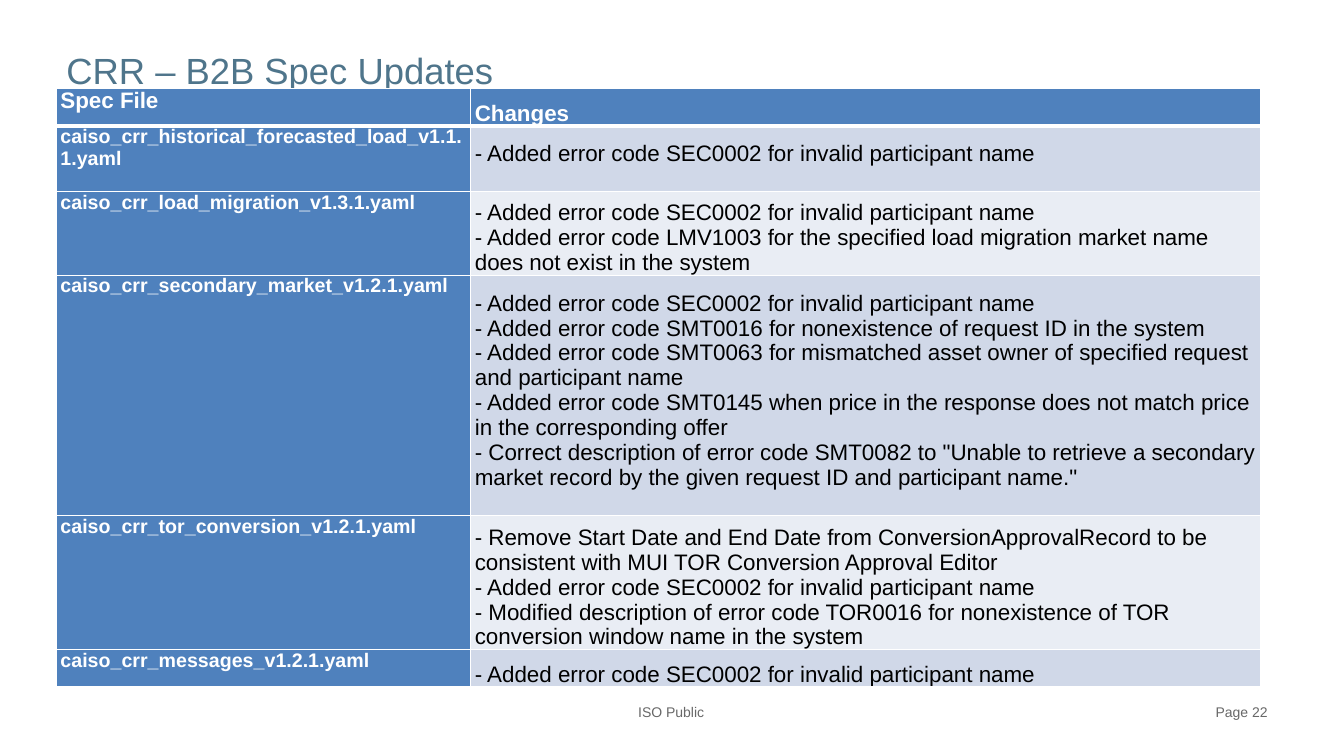
from lxml.etree import SubElement
from pptx import Presentation
from pptx.dml.color import RGBColor
from pptx.enum.text import MSO_ANCHOR, PP_ALIGN
from pptx.oxml.ns import qn
from pptx.util import Inches, Pt

COLORS = {
    "title": "4F758B",
    "footer": "686868",
    "header": "4F81BD",
    "odd": "D0D8E8",
    "even": "E9EDF4",
    "white": "FFFFFF",
    "black": "000000",
}
INVALID_NAME = "- Added error code SEC0002 for invalid participant name"
SPEC_ROWS = [
    ("caiso_crr_historical_forecasted_load_v1.1.1.yaml", 0.65, 0.25, [INVALID_NAME]),
    ("caiso_crr_load_migration_v1.3.1.yaml", 0.83, 0, [
        INVALID_NAME,
        "- Added error code LMV1003 for the specified load migration market name does not exist in the system",
    ]),
    ("caiso_crr_secondary_market_v1.2.1.yaml", 2.22, 0.25, [
        INVALID_NAME,
        "- Added error code SMT0016 for nonexistence of request ID in the system",
        "- Added error code SMT0063 for mismatched asset owner of specified request and participant name",
        "- Added error code SMT0145 when price in the response does not match price in the corresponding offer",
        '- Correct description of error code SMT0082 to "Unable to retrieve a secondary market record '
        'by the given request ID and participant name."',
    ]),
    ("caiso_crr_tor_conversion_v1.2.1.yaml", 1.11, 0, [
        "- Remove Start Date and End Date from ConversionApprovalRecord to be consistent with "
        "MUI TOR Conversion Approval Editor",
        INVALID_NAME,
        "- Modified description of error code TOR0016 for nonexistence of TOR conversion window name in the system",
    ]),
    ("caiso_crr_messages_v1.2.1.yaml", 0.37, 0, [INVALID_NAME]),
]


class SlideBuilder:
    font_name = "Arial"

    def __init__(self, page):
        self.page = page

    def fill_text(self, frame, lines, size, color, bold=False, align=PP_ALIGN.LEFT):
        formats = {"name": self.font_name, "size": Pt(size), "bold": bold}
        for index, line in enumerate(lines):
            para = frame.add_paragraph() if index else frame.paragraphs[0]
            para.alignment = align
            span = para.add_run()
            span.text = line
            for name, value in formats.items():
                setattr(span.font, name, value)
            span.font.color.rgb = RGBColor.from_string(COLORS[color])

    def text(self, place, line, size, color, margins, align=PP_ALIGN.LEFT):
        box = self.page.shapes.add_textbox(*map(Inches, place))
        frame = box.text_frame
        frame.word_wrap = True
        for side, margin in zip(("left", "top", "right", "bottom"), margins):
            setattr(frame, f"margin_{side}", Inches(margin))
        self.fill_text(frame, [line], size, color, align=align)

    def borders(self, cell, top, bottom):
        properties = cell._tc.get_or_add_tcPr()
        widths = {"a:lnL": 1, "a:lnR": 1, "a:lnT": top, "a:lnB": bottom}
        for index, (tag, width) in enumerate(widths.items()):
            line = SubElement(properties, qn(tag), w=str(Pt(width)))
            fill = SubElement(line, qn("a:solidFill"))
            SubElement(fill, qn("a:srgbClr"), val=COLORS["white"])
            properties.insert(index, line)

    def cell(self, cell, lines, size, color, fill, bold, anchor, gap=0):
        formats = {
            "margin_left": Inches(0.04),
            "margin_right": Inches(0.04),
            "margin_top": 0,
            "margin_bottom": Inches(gap),
            "vertical_anchor": anchor,
        }
        for name, value in formats.items():
            setattr(cell, name, value)
        cell.fill.solid()
        cell.fill.fore_color.rgb = RGBColor.from_string(COLORS[fill])
        self.fill_text(cell.text_frame, lines, size, color, bold)

    def table(self, place, widths, header, header_height, rows):
        heights = [header_height] + [height for _, height, _, _ in rows]
        shape = self.page.shapes.add_table(len(heights), len(widths), *map(Inches, place))
        table = shape.table
        for column, width in zip(table.columns, widths):
            column.width = Inches(width)
        for row, height in zip(table.rows, heights):
            row.height = Inches(height)
        anchors = (MSO_ANCHOR.TOP, MSO_ANCHOR.BOTTOM)
        for column, (label, anchor) in enumerate(zip(header, anchors)):
            self.cell(table.cell(0, column), [label], 16, "white", "header", True, anchor)
        for index, (file_name, _, gap, changes) in enumerate(rows, 1):
            band = "odd" if index % 2 else "even"
            self.cell(table.cell(index, 0), [file_name], 14, "white", "header", True, anchors[0])
            self.cell(table.cell(index, 1), changes, 16, "black", band, False, anchors[1], gap)
        for index, row in enumerate(table.rows):
            for cell in row.cells:
                self.borders(cell, 3 if index == 1 else 1, 3 if index == 0 else 1)


def main():
    deck = Presentation()
    deck.slide_width, deck.slide_height = Inches(13.33), Inches(7.5)
    builder = SlideBuilder(deck.slides.add_slide(deck.slide_layouts[6]))
    builder.text((6.32, 6.98, 0.69, 0.18), "ISO Public", 10, "footer", (0.01, 0, 0, 0))
    builder.text((0.56, 0.39, 9, 0.44), "CRR – B2B Spec Updates", 26, "title", (0.1, 0.09, 0.1, 0))
    builder.text((9.56, 6.93, 3.11, 0.4), "Page 22", 10, "footer", (0.1, 0.05, 0.1, 0.05), PP_ALIGN.RIGHT)
    builder.table((0.56, 0.88, 11.94, 5.55), (4.11, 7.83), ("Spec File", "Changes"), 0.37, SPEC_ROWS)
    deck.save("out.pptx")


if __name__ == "__main__":
    main()
